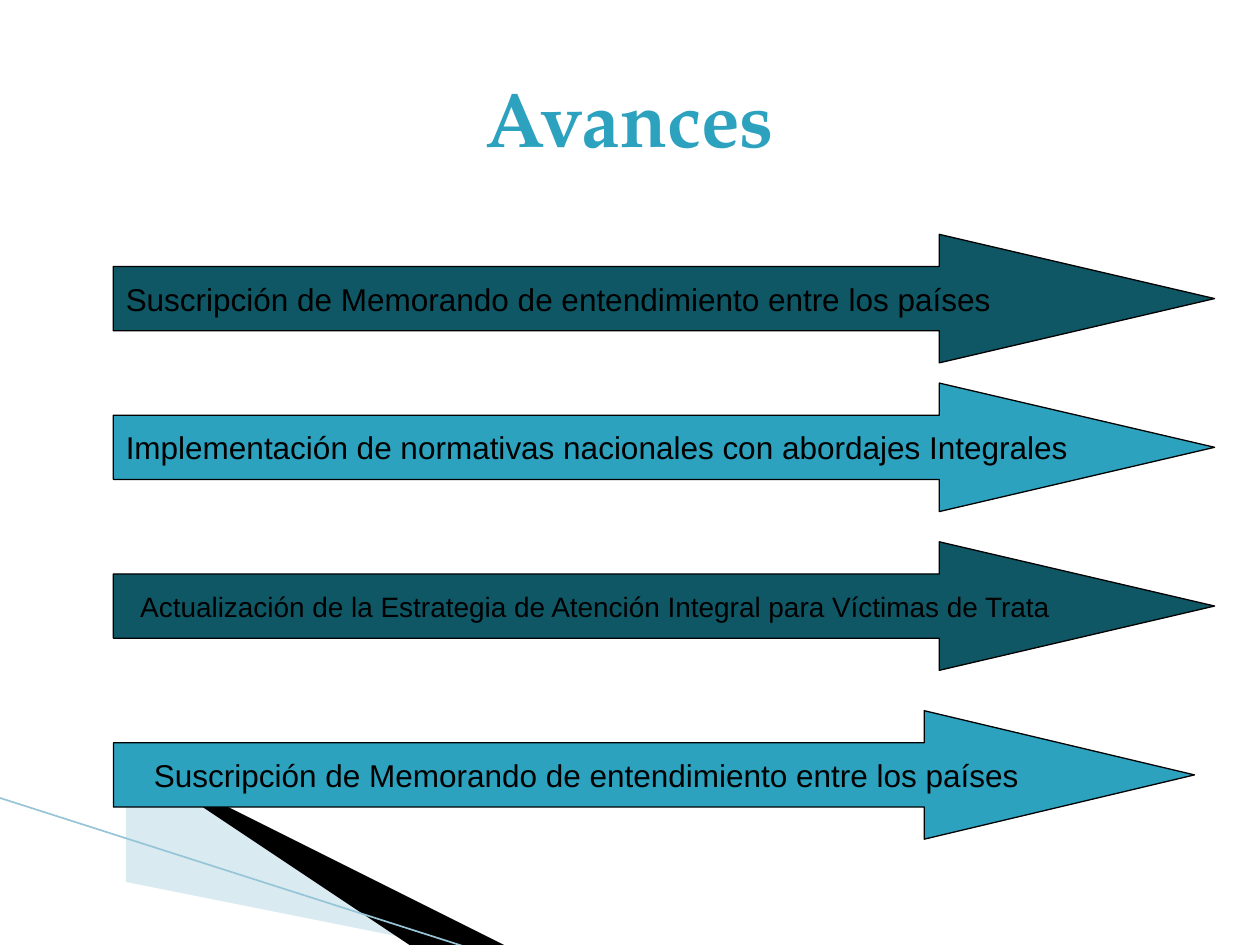
from pptx import Presentation
from pptx.dml.color import RGBColor
from pptx.enum.shapes import MSO_CONNECTOR as Conn, MSO_SHAPE as Shape
from pptx.enum.text import MSO_ANCHOR as Anchor, PP_ALIGN as Align
from pptx.oxml.ns import qn
from pptx.util import Inches, Pt
from lxml.etree import SubElement

# Content
TITLE = "Avances"
MEMO = "Suscripción de Memorando de entendimiento entre los países"
ARROWS = [  # text, top, width, size, alignment
    (MEMO, 1.86, 8.74, 18, Align.LEFT),
    ("Implementación de normativas nacionales con abordajes Integrales",
     3.04, 8.74, 18, Align.LEFT),
    ("Actualización de la Estrategia de Atención Integral para Víctimas de Trata",
     4.3, 8.74, 16, Align.CENTER),
    (MEMO, 5.64, 8.58, 18, Align.CENTER),
]
WEDGES = [  # colour, opacity in percent, outline
    ("pale", 40, [(0.55, 6.51), (5.95, 7.51), (4.56, 7.51), (0.55, 6.5)]),
    ("black", 100, [(0.53, 6.49), (4.57, 7.51), (3.72, 7.52), (0.54, 6.5)]),
]
EDGE = [(-0.01, 6.33), (3.71, 7.52)]
COLORS = {"dark": "105766", "teal": "2DA2BF", "black": "000000",
          "pale": "A0CBDC", "edge": "97C5D8"}
LEFT, HIGH = 0.9, 1.02   # arrow left side and height
HEAD = 1 / 4             # arrowhead as a share of the arrow's width


def color(name):
    return RGBColor.from_string(COLORS[name])


def write(shape, text, size, font="Arial", ink="black", bold=False,
          align=Align.LEFT, wrap=True):
    frame = shape.text_frame
    frame.word_wrap = wrap
    frame.vertical_anchor = Anchor.MIDDLE
    para = frame.paragraphs[0]
    para.alignment = align
    run = para.add_run()
    run.text = text
    run.font.name, run.font.size, run.font.bold = font, Pt(size), bold
    run.font.color.rgb = color(ink)


def paint(shape, name, alpha=100):
    shape.shadow.inherit = False
    shape.fill.solid()
    shape.fill.fore_color.rgb = color(name)
    if alpha < 100:
        tone = shape.fill._xPr.find(qn("a:solidFill"))[0]
        SubElement(tone, qn("a:alpha"), val=str(alpha * 1000))


deck = Presentation()
deck.slide_width, deck.slide_height = Inches(10), Inches(7.5)
slide = deck.slides.add_slide(deck.slide_layouts[5])
shapes = slide.shapes

# Corner wedges and their edge
for name, alpha, points in WEDGES:
    pen = shapes.build_freeform(*points[0], scale=Inches(1))
    pen.add_line_segments(points[1:], close=True)
    wedge = pen.convert_to_shape()
    paint(wedge, name, alpha)
    wedge.line.fill.background()

ends = [Inches(n) for point in EDGE for n in point]
edge = shapes.add_connector(Conn.STRAIGHT, *ends)
edge.line.color.rgb = color("edge")
edge.line.width = Pt(0.95)
SubElement(edge._element.spPr, qn("a:effectLst"))

# Title
title = shapes.title
title.left, title.top = Inches(0.5), Inches(0.3)
title.width, title.height = Inches(9), Inches(1.25)
write(title, TITLE, 44, font="TeX Gyre Pagella", ink="teal", bold=True,
      align=Align.CENTER)

# Arrows in alternating colours
for i, (text, top, width, size, align) in enumerate(ARROWS):
    arrow = shapes.add_shape(Shape.RIGHT_ARROW, Inches(LEFT), Inches(top),
                             Inches(width), Inches(HIGH))
    arrow.adjustments[0] = 0.5
    arrow.adjustments[1] = width * HEAD / HIGH
    paint(arrow, ("dark", "teal")[i % 2])
    arrow.line.color.rgb = color("black")
    arrow.line.width = Pt(0.75)
    write(arrow, text, size, align=align, wrap=False)

deck.save("out.pptx")
